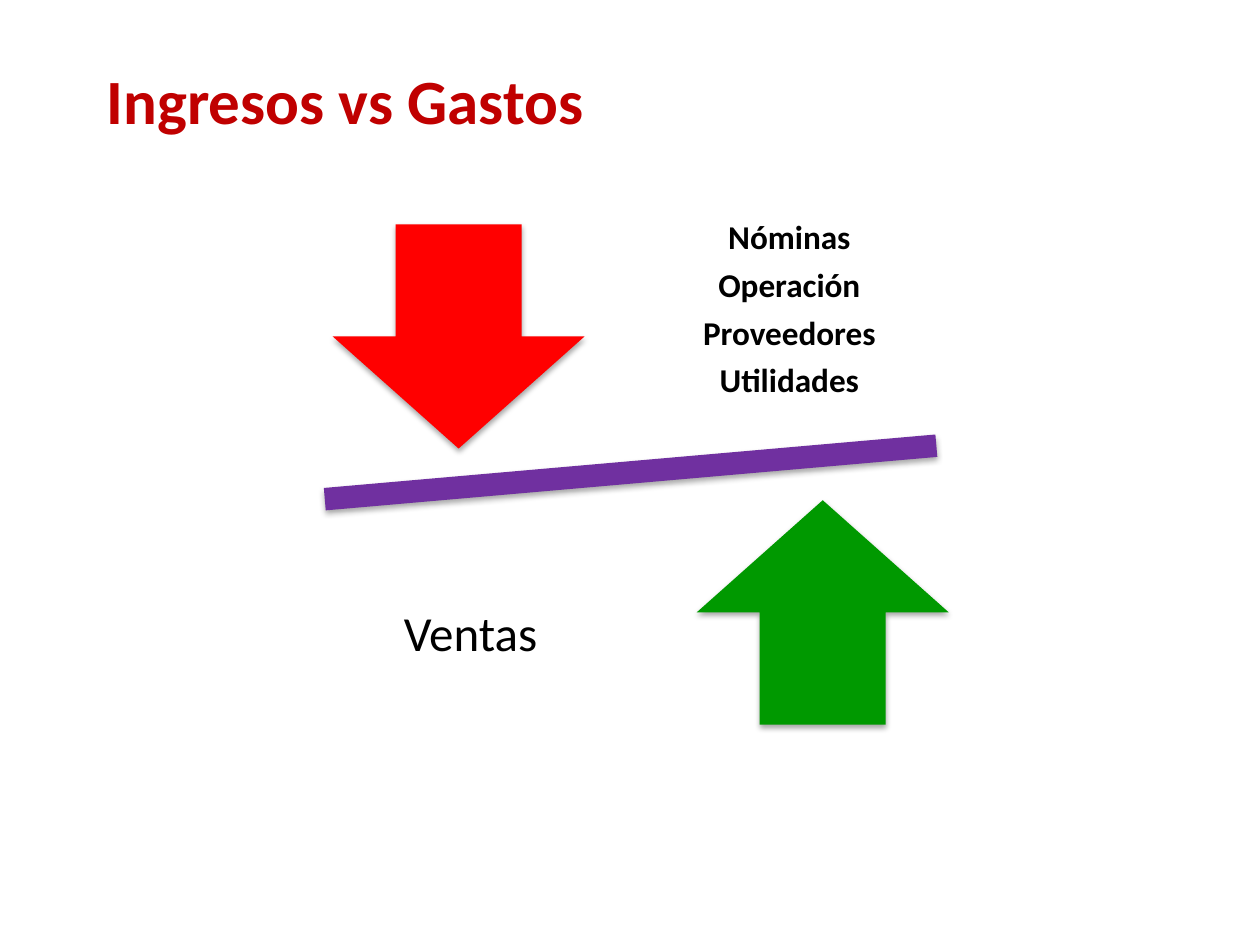
from lxml import etree
from pptx import Presentation
from pptx.dml.color import RGBColor
from pptx.enum.shapes import MSO_SHAPE
from pptx.enum.text import MSO_ANCHOR, MSO_AUTO_SIZE, PP_ALIGN
from pptx.oxml.ns import qn
from pptx.util import Inches, Pt

MINUS, DOWN, UP = MSO_SHAPE.MATH_MINUS, MSO_SHAPE.DOWN_ARROW, MSO_SHAPE.UP_ARROW
MIDDLE, CENTER = MSO_ANCHOR.MIDDLE, PP_ALIGN.CENTER

# Content: position is left, top, width, height in inches
TITLE = ("Ingresos vs Gastos", (0.75, 0.44, 4.14, 0.71))
BALANCE = [  # preset, position, rotation, fill
    (MINUS, (1.69, 3.37, 6.63, 0.76), 355, "7030A0"),
    (DOWN, (2.64, 1.78, 2, 1.78), 0, "FF0000"),
    (UP, (5.53, 3.97, 2, 1.78), 0, "009900"),
]
LABELS = [  # lines, position, inset, font size, bold
    (["Nóminas", "Operación", "Proveedores", "Utilidades"],
     (5.2, 1.53, 2.13, 1.87), 0.15, 19, True),
    (["Ventas"], (2.67, 4.11, 2.13, 1.87), 0.22, 28, False),
]
SHADOW = {"blurRad": 40000, "dist": 23000, "dir": 5400000, "rotWithShape": 0}


def rgb(value):
    return RGBColor.from_string(value)


def place(position):
    return [Inches(v) for v in position]


def add_text(p, text, color, size, bold):
    r = p.add_run()
    r.text = text
    r.font.color.rgb = rgb(color)
    for name, value in {"name": "Calibri", "size": Pt(size), "bold": bold}.items():
        setattr(r.font, name, value)


def add_shadow(sp):
    sp.shadow.inherit = False
    effects = sp._element.spPr.find(qn("a:effectLst"))
    outer = etree.SubElement(effects, qn("a:outerShdw"),
                             {k: str(v) for k, v in SHADOW.items()})
    color = etree.SubElement(outer, qn("a:srgbClr"), val="000000")
    etree.SubElement(color, qn("a:alpha"), val="35000")


prs = Presentation()
prs.slide_width, prs.slide_height = Inches(10), Inches(7.5)
s = prs.slides.add_slide(prs.slide_layouts[6])

# Title
text, position = TITLE
tf = s.shapes.add_textbox(*place(position)).text_frame
tf.word_wrap = False
tf.auto_size = MSO_AUTO_SIZE.SHAPE_TO_FIT_TEXT
add_text(tf.paragraphs[0], text, "C00000", 36, True)

# Tilted bar and the two arrows
for preset, position, rotation, fill in BALANCE:
    sp = s.shapes.add_shape(preset, *place(position))
    sp.rotation = rotation
    sp.fill.solid()
    sp.fill.fore_color.rgb = rgb(fill)
    sp.line.fill.background()
    add_shadow(sp)

# Labels beside the arrows
for lines, position, inset, size, bold in LABELS:
    tf = s.shapes.add_textbox(*place(position)).text_frame
    tf.word_wrap = True
    tf.vertical_anchor = MIDDLE
    for side in ("left", "top", "right", "bottom"):
        setattr(tf, f"margin_{side}", Inches(inset))
    for i, line in enumerate(lines):
        p = tf.add_paragraph() if i else tf.paragraphs[0]
        layout = {"alignment": CENTER, "line_spacing": 0.9,
                  "space_after": Pt(size * 0.35)}
        for name, value in layout.items():
            setattr(p, name, value)
        add_text(p, line, "000000", size, bold)

prs.save("out.pptx")
